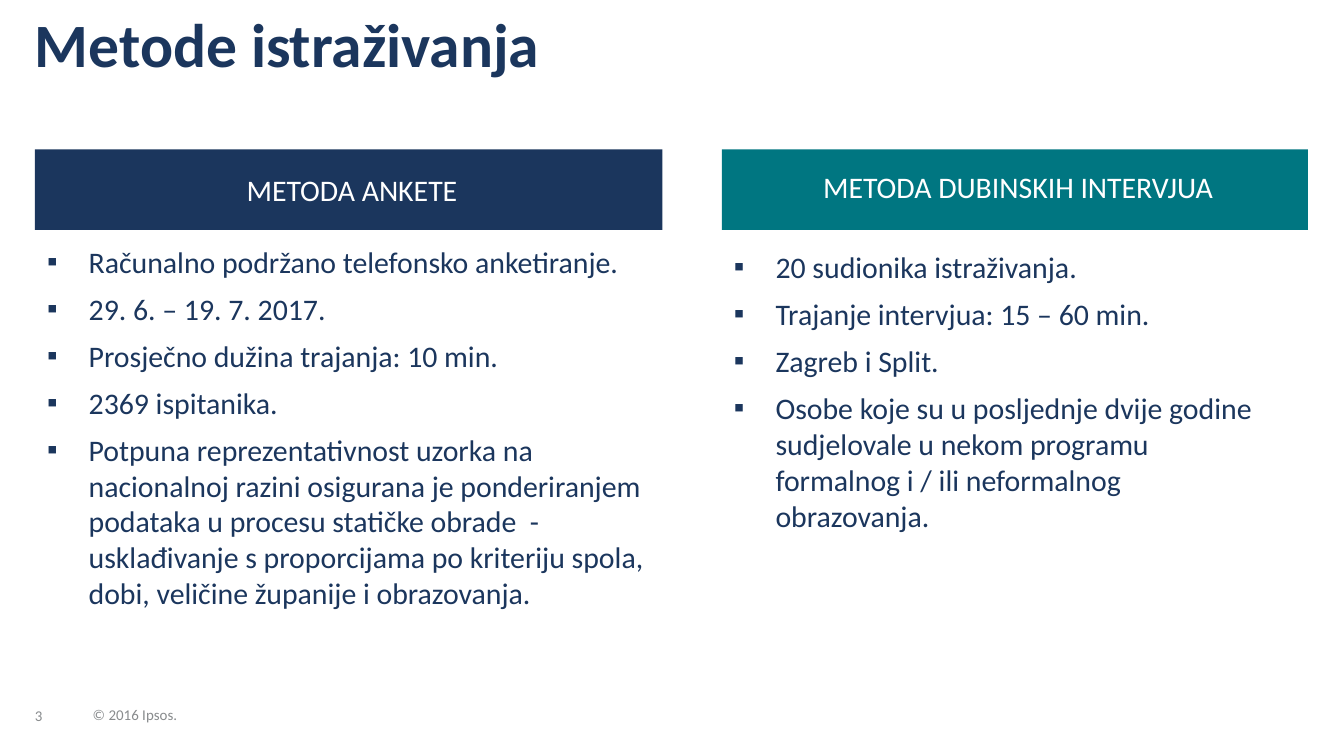
from lxml import etree
from pptx import Presentation
from pptx.dml.color import RGBColor
from pptx.enum.text import MSO_ANCHOR, MSO_AUTO_SIZE, PP_ALIGN
from pptx.oxml.ns import qn
from pptx.util import Pt

LEFT, MID, JUST = PP_ALIGN.LEFT, PP_ALIGN.CENTER, PP_ALIGN.JUSTIFY
TOP, CENTRE, BASE = MSO_ANCHOR.TOP, MSO_ANCHOR.MIDDLE, MSO_ANCHOR.BOTTOM

# Content
TITLE = "Metode istraživanja"
NAVY, TEAL, GREY, WHITE = "1B365D", "007681", "888B8D", "FFFFFF"
COLS = [
    dict(head="METODA ANKETE", fill=NAVY, x=18.7, wide=336.2, body=336.2,
         top=130.3, lead=1, first=JUST, items=[
             "Računalno podržano telefonsko anketiranje.",
             "29. 6. – 19. 7. 2017.",
             "Prosječno dužina trajanja: 10 min.",
             "2369 ispitanika.",
             "Potpuna reprezentativnost uzorka na nacionalnoj razini osigurana "
             "je ponderiranjem podataka u procesu statičke obrade  - "
             "usklađivanje s proporcijama po kriteriju spola, dobi, veličine "
             "županije i obrazovanja."]),
    dict(head="METODA DUBINSKIH INTERVJUA", fill=TEAL, x=386.7, wide=313.9,
         body=300.2, top=133.2, lead=0.8, first=LEFT, items=[
             "20 sudionika istraživanja.",
             "Trajanje intervjua: 15 – 60 min.",
             "Zagreb i Split.",
             "Osobe koje su u posljednje dvije godine sudjelovale u nekom "
             "programu formalnog i / ili neformalnog obrazovanja."]),
]
# Text, left, top, width, height
FOOT = [("3", 18.7, 369.4, 24.5, 18.7),
        ("© 2016 Ipsos.", 49.7, 374.4, 54.7, 13)]


def tint(code):
    return RGBColor.from_string(code)


def place(shape, x, y, w, h):
    shape.left, shape.top = Pt(x), Pt(y)
    shape.width, shape.height = Pt(w), Pt(h)


def bullet(para):
    props = para._p.get_or_add_pPr()
    props.set("marL", str(Pt(23)))
    props.set("indent", str(-Pt(22.3)))
    etree.SubElement(props, qn("a:buFont")).set("typeface", "Arial")
    etree.SubElement(props, qn("a:buChar")).set("char", "▪")


def write(shape, lines, size=16, color=NAVY, bold=False, align=LEFT, first=None,
          anchor=TOP, lead=1, gap=0, pad=(0, 0), wrap=True, dots=False):
    frame = shape.text_frame
    frame.auto_size = MSO_AUTO_SIZE.NONE
    frame.word_wrap, frame.vertical_anchor = wrap, anchor
    frame.margin_left, frame.margin_right = Pt(pad[0]), Pt(pad[1])
    frame.margin_top = frame.margin_bottom = 0
    for i, line in enumerate(lines):
        para = frame.add_paragraph() if i else frame.paragraphs[0]
        if dots:
            bullet(para)
        para.alignment = align if i or first is None else first
        para.line_spacing = lead
        para.space_before = Pt(gap if i else 0)
        para.space_after = Pt(gap)
        run = para.add_run()
        run.text = line
        font = run.font
        font.name, font.size, font.bold = "Calibri", Pt(size), bold
        font.color.rgb = tint(color)


deck = Presentation()
deck.slide_width, deck.slide_height = Pt(720), Pt(405)
slide = deck.slides.add_slide(deck.slide_layouts.get_by_name("Comparison"))
title, *slots = slide.placeholders

# Title
place(title, 18.7, 7.9, 456.5, 36)
write(title, [TITLE], size=33, bold=True, lead=0.9)

# Two columns: a coloured heading over a list
for col, head, body in zip(COLS, slots[::2], slots[1::2]):
    place(head, col["x"], 80, col["wide"], 43.2)
    head.fill.solid()
    head.fill.fore_color.rgb = tint(col["fill"])
    write(head, [col["head"]], color=WHITE, align=MID, anchor=CENTRE,
          lead=col["lead"], gap=3, pad=(5.8, 2.2))
    place(body, col["x"], col["top"], col["body"], 159.8)
    write(body, col["items"], first=col["first"], gap=3, pad=(5.8, 2.2),
          dots=True)

# Footer
for text, *spot in FOOT:
    box = slide.shapes.add_textbox(0, 0, 0, 0)
    place(box, *spot)
    write(box, [text], size=8, color=GREY, anchor=BASE, lead=0.85, wrap=False)

deck.save("out.pptx")
